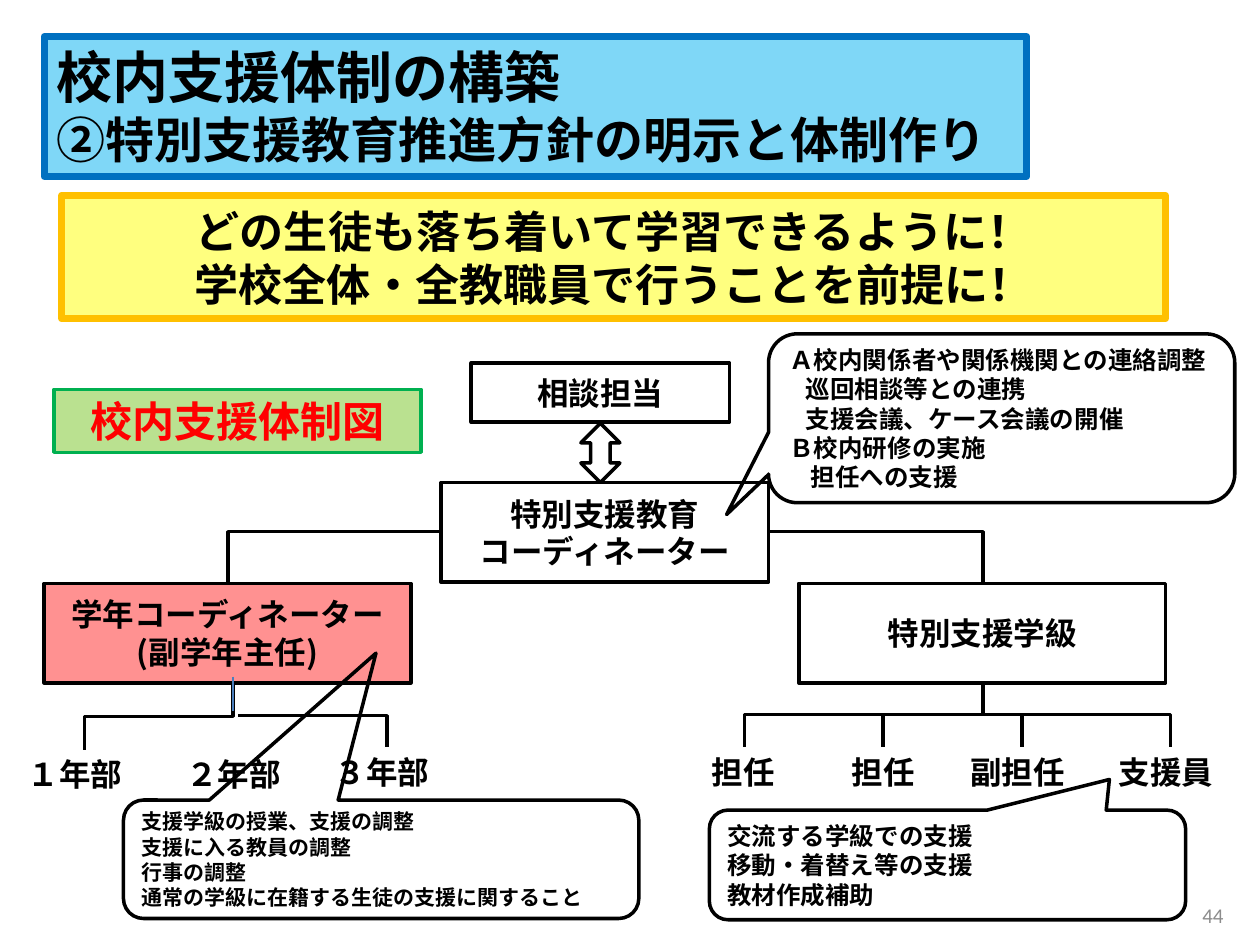
from dataclasses import dataclass
from typing import Optional

from lxml import etree
from pptx import Presentation
from pptx.dml.color import RGBColor
from pptx.enum.shapes import MSO_CONNECTOR, MSO_SHAPE
from pptx.enum.text import MSO_ANCHOR, PP_ALIGN
from pptx.oxml.ns import qn
from pptx.util import Emu, Inches, Pt

LEFT, CENTER, RIGHT = PP_ALIGN.LEFT, PP_ALIGN.CENTER, PP_ALIGN.RIGHT
TOP, MIDDLE = MSO_ANCHOR.TOP, MSO_ANCHOR.MIDDLE
RECTANGLE, PROCESS = MSO_SHAPE.RECTANGLE, MSO_SHAPE.FLOWCHART_PROCESS
CALLOUT, DOUBLE_ARROW = MSO_SHAPE.ROUNDED_RECTANGULAR_CALLOUT, MSO_SHAPE.UP_DOWN_ARROW
STRAIGHT, ELBOW = MSO_CONNECTOR.STRAIGHT, MSO_CONNECTOR.ELBOW

PAGE_WIDTH, PAGE_HEIGHT = Inches(10), Inches(7.5)
COLUMNS, ROWS = 100, 75


@dataclass(frozen=True)
class Theme:
    font: str = "Noto Sans CJK JP"
    number_font: str = "Calibri"
    ink: str = "000000"
    red: str = "FF0000"
    blue: str = "00B0F0"
    blue_edge: str = "0070C0"
    yellow: str = "FFFF00"
    yellow_edge: str = "FFC000"
    green: str = "92D050"
    green_edge: str = "00B050"
    stub: str = "4B7EBC"
    number: str = "8C8C8C"
    heading: float = 32
    subheading: float = 28
    message: float = 25.2
    label: float = 24
    body: float = 18
    note: float = 14
    small: float = 12
    edge: float = 2
    thick_edge: float = 4
    thin_edge: float = 0.75


THEME = Theme()


@dataclass(frozen=True)
class Line:
    text: str
    size: float = THEME.body
    indent: float = 0


@dataclass(frozen=True)
class Box:
    """A shape on the grid: left and width in columns, top and height in rows."""
    left: float
    top: float
    width: float
    height: float
    lines: tuple[Line, ...] = ()
    shape: Optional[MSO_SHAPE] = PROCESS
    fill: Optional[str] = None
    opacity: int = 100
    edge: str = THEME.ink
    edge_width: float = THEME.edge
    align: PP_ALIGN = CENTER
    anchor: MSO_ANCHOR = MIDDLE
    color: str = THEME.ink
    font: str = THEME.font
    bold: bool = True
    pointer: tuple[float, ...] = ()


def lines_of(size: float, *texts: str) -> tuple[Line, ...]:
    return tuple(Line(text, size) for text in texts)


def across(columns: float) -> Emu:
    return Emu(round(PAGE_WIDTH * columns / COLUMNS))


def down(rows: float) -> Emu:
    return Emu(round(PAGE_HEIGHT * rows / ROWS))


def write_lines(frame, box: Box) -> None:
    frame.word_wrap = True
    frame.vertical_anchor = box.anchor
    frame.text = "\n".join(line.text for line in box.lines)
    for para, line in zip(frame.paragraphs, box.lines):
        para.alignment = box.align
        if line.indent:
            para._p.get_or_add_pPr().set("marL", str(across(line.indent)))
        for span in para.runs:
            span.font.size = Pt(line.size)
            span.font.bold = box.bold
            span.font.name = box.font
            span.font.color.rgb = RGBColor.from_string(box.color)
            east_asian = etree.SubElement(span._r.rPr, qn("a:ea"))
            east_asian.set("typeface", box.font)


def draw_box(page, box: Box) -> None:
    place = across(box.left), down(box.top), across(box.width), down(box.height)
    if box.shape is None:
        shape = page.shapes.add_textbox(*place)
    else:
        shape = page.shapes.add_shape(box.shape, *place)
        shape.shadow.inherit = False
        shape.line.color.rgb = RGBColor.from_string(box.edge)
        shape.line.width = Pt(box.edge_width)
        if box.fill:
            shape.fill.solid()
            shape.fill.fore_color.rgb = RGBColor.from_string(box.fill)
            color = shape.fill._xPr.find(qn("a:solidFill"))[0]
            etree.SubElement(color, qn("a:alpha")).set("val", str(box.opacity * 1000))
        else:
            shape.fill.background()
        for index, value in enumerate(box.pointer):
            shape.adjustments[index] = value
    if box.lines:
        write_lines(shape.text_frame, box)


def draw_connector(page, kind, start, end, color=THEME.ink, width=THEME.edge):
    connector = page.shapes.add_connector(
        kind, across(start[0]), down(start[1]), across(end[0]), down(end[1]))
    connector.line.color.rgb = RGBColor.from_string(color)
    connector.line.width = Pt(width)
    etree.SubElement(connector._element.spPr, qn("a:effectLst"))
    return connector


def draw_corner(page, start, end) -> None:
    """Run sideways from start, then turn once towards end."""
    connector = draw_connector(page, ELBOW, start, end)
    connector._element.spPr.find(qn("a:prstGeom")).set("prst", "bentConnector2")


def draw_branch(page, start, end) -> None:
    """Run down, sideways and down again: a sideways elbow turned a quarter."""
    middle_x, middle_y = (start[0] + end[0]) / 2, (start[1] + end[1]) / 2
    half_width, half_height = (end[1] - start[1]) / 2, abs(end[0] - start[0]) / 2
    to_right = end[0] > start[0]
    if to_right:
        half_width = -half_width
    connector = draw_connector(page, ELBOW,
                               (middle_x - half_width, middle_y - half_height),
                               (middle_x + half_width, middle_y + half_height))
    quarter_turns = 3 if to_right else 1
    connector._element.spPr.find(qn("a:xfrm")).set("rot", str(quarter_turns * 5400000))


HEADERS = (
    Box(4.9, 15.5, 87.6, 9.8,
        lines_of(THEME.message, "どの生徒も落ち着いて学習できるように！\v学校全体・全教職員で行うことを前提に！"),
        RECTANGLE, THEME.yellow, 50, THEME.yellow_edge, THEME.thick_edge),
    Box(3.5, 2.9, 78, 11.1,
        (Line("校内支援体制の構築", THEME.heading),
         Line("②特別支援教育推進方針の明示と体制作り", THEME.subheading)),
        RECTANGLE, THEME.blue, 50, THEME.blue_edge, THEME.thick_edge, LEFT, TOP),
)
ROLES = (
    Box(37.4, 28.8, 20.5, 4.7, lines_of(THEME.body, "相談担当")),
    Box(35, 38.3, 26, 7.9, lines_of(THEME.body, "特別支援教育", "コーディネーター")),
    Box(3.5, 46.3, 29.1, 7.9, lines_of(THEME.body, "学年コーディネーター(副学年主任)"),
        fill=THEME.red, opacity=43),
    Box(63.4, 46.3, 29.1, 7.9, lines_of(THEME.body, "特別支援学級")),
    Box(46.1, 33.6, 3.1, 4.7, shape=DOUBLE_ARROW),
)
MEMBERS = (
    ("１年部", 1.2, 59.4, LEFT), ("２年部", 13.8, 59.4, LEFT), ("３年部", 25.6, 59.3, LEFT),
    ("担任", 53.9, 59.3, CENTER), ("担任", 65, 59.3, CENTER),
    ("副担任", 76, 59.3, LEFT), ("支援員", 87.8, 59.3, LEFT),
)
NOTES = (
    Box(61, 26.5, 37, 13.4,
        (Line("Ａ校内関係者や関係機関との連絡調整", THEME.note),
         Line("巡回相談等との連携", THEME.note, 1.3),
         Line("支援会議、ケース会議の開催", THEME.note, 1.3),
         Line("Ｂ校内研修の実施", THEME.note),
         Line("担任への支援", THEME.note, 1.7)),
        CALLOUT, align=LEFT, pointer=(-0.59, 0.57, 0.17)),
    Box(9.8, 63.5, 40.9, 9.4,
        lines_of(THEME.small, "支援学級の授業、支援の調整", "支援に入る教員の調整", "行事の調整",
                 "通常の学級に在籍する生徒の支援に関すること"),
        CALLOUT, align=LEFT, pointer=(-0.01, -1.74, 0.17)),
    Box(56.3, 64.3, 37.8, 8.7,
        lines_of(THEME.note, "交流する学級での支援", "移動・着替え等の支援", "教材作成補助"),
        CALLOUT, align=LEFT, pointer=(0.34, -0.78, 0.17)),
    Box(4.3, 30.9, 29.1, 5, lines_of(THEME.label, "校内支援体制図"), RECTANGLE,
        THEME.green, 63, THEME.green_edge, anchor=TOP, color=THEME.red),
    Box(72.8, 70.6, 25.3, 4, lines_of(THEME.small, "44"), None, align=RIGHT,
        color=THEME.number, font=THEME.number_font, bold=False),
)
CLASS_BRANCHES = (59.1, 70.1, 81.1, 92.9)


def main() -> None:
    deck = Presentation()
    deck.slide_width, deck.slide_height = PAGE_WIDTH, PAGE_HEIGHT
    page = deck.slides.add_slide(deck.slide_layouts[6])
    for box in HEADERS + ROLES:
        draw_box(page, box)
    for text, left, top, align in MEMBERS:
        draw_box(page, Box(left, top, 10.2, 4, lines_of(THEME.body, text), None,
                           align=align, anchor=TOP))
    draw_corner(page, (35, 42.2), (18.1, 46.3))
    draw_corner(page, (61, 42.2), (78, 46.3))
    draw_branch(page, (18.5, 54.2), (6.7, 59.5))
    draw_connector(page, STRAIGHT, (18.5, 53.7), (18.5, 56.4), THEME.stub, THEME.thin_edge)
    draw_corner(page, (18.9, 56.8), (30.7, 59.3))
    for column in CLASS_BRANCHES:
        draw_branch(page, (78, 54.1), (column, 59.3))
    for box in NOTES:
        draw_box(page, box)
    deck.save("out.pptx")


if __name__ == "__main__":
    main()
